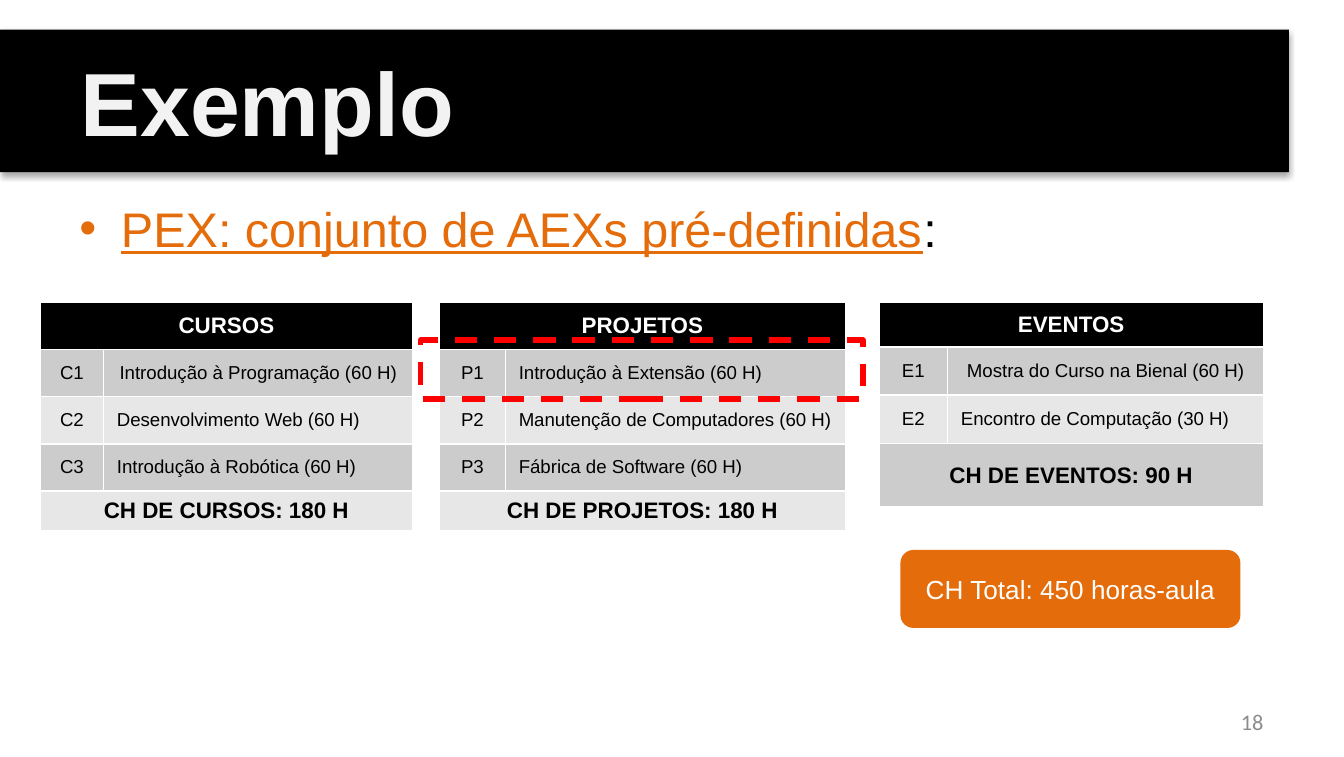
from lxml import etree
from pptx import Presentation
from pptx import util as u
from pptx.dml.color import RGBColor
from pptx.enum import dml, shapes, text
from pptx.oxml import ns

BLACK = RGBColor(0x00, 0x00, 0x00)
WHITE = RGBColor(0xFF, 0xFF, 0xFF)
OFF_WHITE = RGBColor(0xF2, 0xF2, 0xF2)
ORANGE = RGBColor(0xE4, 0x6C, 0x0A)
RED = RGBColor(0xFF, 0x00, 0x00)
GREY = RGBColor(0x8C, 0x8C, 0x8C)
BANDS = (RGBColor(0xE7, 0xE7, 0xE7), RGBColor(0xCC, 0xCC, 0xCC))

LEFT, CENTER, RIGHT, JUSTIFY = (text.PP_ALIGN.LEFT, text.PP_ALIGN.CENTER,
                                text.PP_ALIGN.RIGHT, text.PP_ALIGN.JUSTIFY)
MIDDLE = text.MSO_ANCHOR.MIDDLE

# heading, place, column widths, row heights, (code, activity, alignment), total
TABLES = (
    ("CURSOS", (0.3, 2.25), (0.47, 2.3), (0.35, 0.35, 0.35, 0.35, 0.3),
     (("C1", "Introdução à Programação (60 H)", CENTER),
      ("C2", "Desenvolvimento Web (60 H)", LEFT),
      ("C3", "Introdução à Robótica (60 H)", LEFT)),
     "CH DE CURSOS: 180 H"),
    ("PROJETOS", (3.27, 2.25), (0.49, 2.53), (0.35, 0.35, 0.35, 0.35, 0.3),
     (("P1", "Introdução à Extensão (60 H)", LEFT),
      ("P2", "Manutenção de Computadores (60 H)", LEFT),
      ("P3", "Fábrica de Software (60 H)", LEFT)),
     "CH DE PROJETOS: 180 H"),
    ("EVENTOS", (6.54, 2.25), (0.51, 2.35), (0.33, 0.36, 0.36, 0.47),
     (("E1", "Mostra do Curso na Bienal (60 H)", CENTER),
      ("E2", "Encontro de Computação (30 H)", LEFT)),
     "CH DE EVENTOS: 90 H"),
)


def write(frame, words, size=10, color=BLACK, bold=False, underline=False,
          align=LEFT, font="Arial"):
    """Add a formatted run to the first paragraph and return the paragraph."""
    para = frame.paragraphs[0]
    para.alignment = align
    span = para.add_run()
    span.text = words
    span.font.name = font
    span.font.size = u.Pt(size)
    span.font.bold = bold
    span.font.underline = underline
    span.font.color.rgb = color
    return para


def place(shape, *box):
    shape.left, shape.top, shape.width, shape.height = map(u.Inches, box)


def indent(para, margin, first):
    props = para._p.get_or_add_pPr()
    props.set("marL", str(u.Inches(margin)))
    props.set("indent", str(u.Inches(first)))


def add_drop_shadow(shape):
    effects = etree.SubElement(shape._element.spPr, ns.qn("a:effectLst"))
    shadow = etree.SubElement(effects, ns.qn("a:outerShdw"), blurRad=str(u.Pt(3.1)),
                              dist=str(u.Pt(1.8)), dir="5400000", rotWithShape="0")
    color = etree.SubElement(shadow, ns.qn("a:srgbClr"), val=str(BLACK))
    etree.SubElement(color, ns.qn("a:alpha"), val="35000")


def fill_title(title):
    place(title, 0, 0.22, 9.59, 1.06)
    title.fill.solid()
    title.fill.fore_color.rgb = BLACK
    add_drop_shadow(title)
    frame = title.text_frame
    frame.vertical_anchor = MIDDLE
    frame.auto_size = text.MSO_AUTO_SIZE.NONE
    indent(write(frame, "Exemplo", size=48, color=OFF_WHITE, bold=True), 0.5, 0)


def fill_body(body):
    place(body, 0.49, 1.43, 9.22, 1.18)
    frame = body.text_frame
    frame.auto_size = text.MSO_AUTO_SIZE.NONE
    write(frame, "PEX: conjunto de AEXs pré-definidas", size=26, color=ORANGE,
          underline=True, align=JUSTIFY)
    para = write(frame, ":", size=26, align=JUSTIFY)
    para.space_before = u.Pt(0)
    indent(para, 0.31, -0.31)


def fill_cell(cell, words, fill, **style):
    cell.fill.solid()
    cell.fill.fore_color.rgb = fill
    cell.vertical_anchor = MIDDLE
    write(cell.text_frame, words, **style)


def add_activity_table(page, heading, corner, widths, heights, activities, total):
    left, top = corner
    table = page.shapes.add_table(
        len(heights), len(widths), u.Inches(left), u.Inches(top),
        u.Inches(sum(widths)), u.Inches(sum(heights))).table
    for column, width in zip(table.columns, widths):
        column.width = u.Inches(width)
    for row, height in zip(table.rows, heights):
        row.height = u.Inches(height)

    last = len(heights) - 1
    for row, words, fill, color in ((0, heading, BLACK, WHITE),
                                    (last, total, BANDS[last % 2], BLACK)):
        table.cell(row, 0).merge(table.cell(row, 1))
        fill_cell(table.cell(row, 0), words, fill, size=12, color=color,
                  bold=True, align=CENTER)
    for row, (code, activity, align) in enumerate(activities, start=1):
        fill_cell(table.cell(row, 0), code, BANDS[row % 2], align=CENTER)
        fill_cell(table.cell(row, 1), activity, BANDS[row % 2], align=align)


def add_box(page, kind, *box):
    shape = page.shapes.add_shape(kind, *map(u.Inches, box))
    shape.shadow.inherit = False
    return shape


def add_total(page):
    box = add_box(page, shapes.MSO_SHAPE.ROUNDED_RECTANGLE, 6.7, 4.09, 2.53, 0.58)
    box.fill.solid()
    box.fill.fore_color.rgb = ORANGE
    box.line.fill.background()
    box.text_frame.vertical_anchor = MIDDLE
    write(box.text_frame, "CH Total: 450 horas-aula", size=14, color=WHITE,
          align=CENTER)


def add_highlight(page):
    box = add_box(page, shapes.MSO_SHAPE.RECTANGLE, 3.13, 2.53, 3.29, 0.44)
    box.fill.background()
    box.line.color.rgb = RED
    box.line.width = u.Pt(3)
    box.line.dash_style = dml.MSO_LINE.DASH


def add_page_number(page, number):
    box = page.shapes.add_textbox(*map(u.Inches, (8.94, 5.22, 0.56, 0.3)))
    box.text_frame.word_wrap = True
    box.text_frame.vertical_anchor = MIDDLE
    write(box.text_frame, number, size=12, color=GREY, align=RIGHT, font="Calibri")


def main():
    deck = Presentation()
    deck.slide_width, deck.slide_height = u.Inches(10), u.Inches(5.63)
    page = deck.slides.add_slide(deck.slide_layouts[1])
    fill_title(page.shapes.title)
    fill_body(page.placeholders[1])
    for table in TABLES:
        add_activity_table(page, *table)
    add_total(page)
    add_highlight(page)
    add_page_number(page, "18")
    deck.save("out.pptx")


if __name__ == "__main__":
    main()
